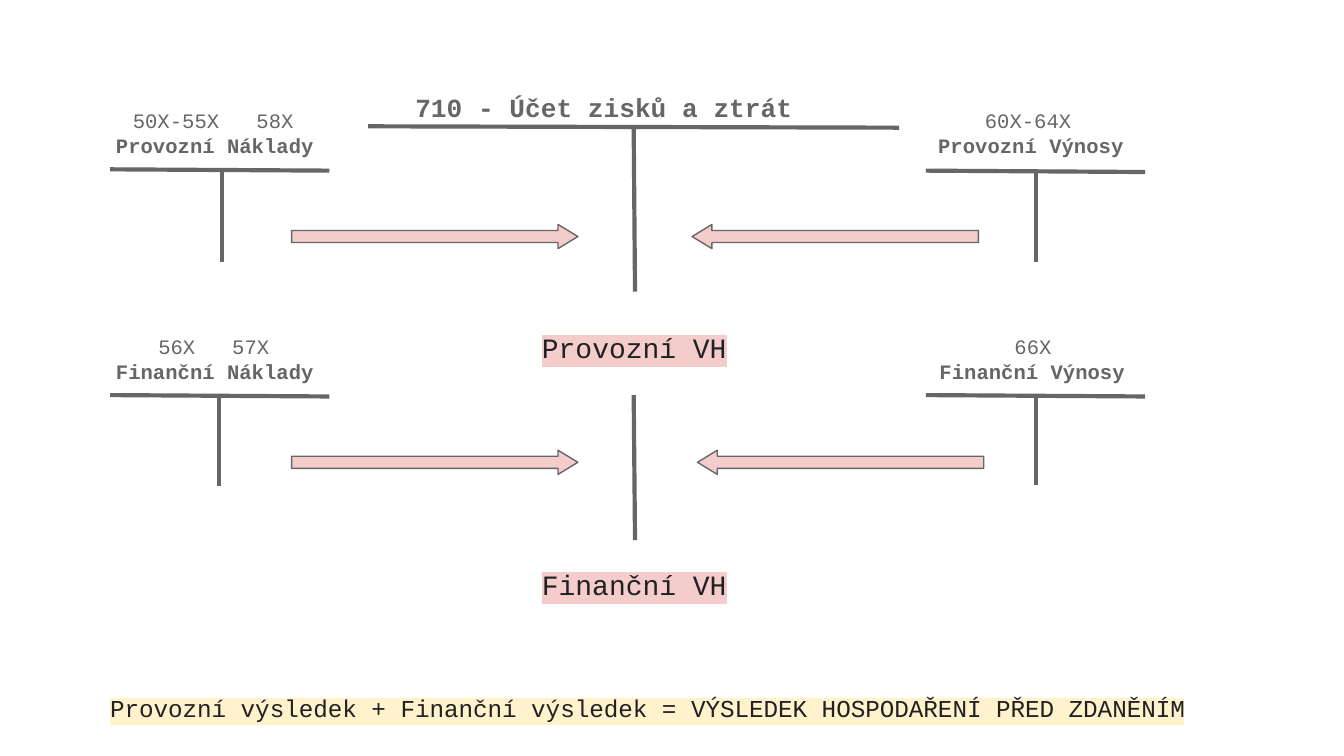
import pptx
import pptx.dml.color
import pptx.enum.shapes
import pptx.enum.text
import pptx.oxml
import pptx.oxml.ns
import pptx.util

THEME = {
    "font": "Courier New",
    "gray": "666666",
    "ink": "212121",
    "pink": "F4CCCC",
    "cream": "FFF2CC",
    "title": 14,
    "label": 11,
    "result": 15,
    "summary": 13,
    "rule": 2.25,
    "outline": 0.75,
}

presentation = pptx.Presentation()
presentation.slide_width = pptx.util.Inches(10)
presentation.slide_height = presentation.slide_width * 9 // 16
slide = presentation.slides.add_slide(presentation.slide_layouts[5])
COLUMN = ROW = presentation.slide_width / 100


def write(text, left, top, width, height, size="label", color="gray",
          bold=False, highlight=None, tab=None, shape=None):
    box = [int(left * COLUMN), int(top * ROW), int(width * COLUMN), int(height * ROW)]
    shape = shape or slide.shapes.add_textbox(*box)
    shape.left, shape.top, shape.width, shape.height = box
    frame = shape.text_frame
    frame.word_wrap = True
    frame.auto_size = pptx.enum.text.MSO_AUTO_SIZE.NONE
    frame.vertical_anchor = pptx.enum.text.MSO_ANCHOR.TOP
    frame.margin_left = frame.margin_right = int(COLUMN)
    frame.margin_top = frame.margin_bottom = int(ROW)
    paragraph = frame.paragraphs[0]
    paragraph.alignment = pptx.enum.text.PP_ALIGN.LEFT
    run = paragraph.add_run()
    run.text = text
    run.font.name = THEME["font"]
    run.font.size = pptx.util.Pt(THEME[size])
    run.font.bold = bold
    run.font.color.rgb = pptx.dml.color.RGBColor.from_string(THEME[color])
    namespace = pptx.oxml.ns.nsdecls("a")
    if highlight:
        fill = run.font._element.find(pptx.oxml.ns.qn("a:solidFill"))
        fill.addnext(pptx.oxml.parse_xml(
            f'<a:highlight {namespace}><a:srgbClr val="{THEME[highlight]}"/></a:highlight>'))
    if tab:
        paragraph._p.get_or_add_pPr().append(pptx.oxml.parse_xml(
            f'<a:tabLst {namespace}><a:tab pos="{int(tab * COLUMN)}" algn="l"/></a:tabLst>'))


def draw_rule(left, top, right, bottom):
    line = slide.shapes.add_connector(
        pptx.enum.shapes.MSO_CONNECTOR.STRAIGHT,
        int(left * COLUMN), int(top * ROW), int(right * COLUMN), int(bottom * ROW))
    line.line.color.rgb = pptx.dml.color.RGBColor.from_string(THEME["gray"])
    line.line.width = pptx.util.Pt(THEME["rule"])
    line._element.spPr.append(pptx.oxml.parse_xml(
        f'<a:effectLst {pptx.oxml.ns.nsdecls("a")}/>'))


write("710 - Účet zisků a ztrát", 29.9, 5.8, 36, 4.8, size="title", bold=True,
      shape=slide.shapes.title)
draw_rule(27.4, 9.4, 66.9, 9.5)
draw_rule(47.15, 9.6, 47.25, 21.7)
draw_rule(47.15, 29.4, 47.25, 40.2)

accounts = [
    ("Provozní Náklady", 7.64, 8.9, 17.9, 3.9, "50X-55X\t58X", 8.9, 15.7, 9.2,
     8.2, 12.6, 16.5, 12.8),
    ("Finanční Náklady", 7.64, 25.7, 18.2, 3.1, "56X\t57X", 10.8, 11.6, 5.5,
     8.2, 29.4, 16.3, 29.5),
    ("Provozní Výnosy", 68.82, 8.9, 17.9, 2.5, "60X-64X", 72.3, 15.3, None,
     68.9, 12.7, 77.1, 12.8),
    ("Finanční Výnosy", 68.92, 25.7, 22, 3.1, "66X", 74.5, 6.6, None,
     68.9, 29.4, 77.1, 29.4),
]
for (name, name_left, name_top, name_width, name_height, codes, codes_left,
     codes_width, tab, bar_left, bar_top, stem, stem_top) in accounts:
    draw_rule(bar_left, bar_top, bar_left + 16.3, bar_top + 0.1)
    draw_rule(stem, stem_top, stem, stem_top + 6.7)
    write(name, name_left, name_top, name_width, name_height, bold=True)
    write(codes, codes_left, name_top - 1.85, codes_width, 2.5, tab=tab)

arrows = [
    (21.7, 16.7, False),
    (21.7, 33.5, False),
    (51.5, 16.7, True),
    (51.9, 33.5, True),
]
for left, top, flipped in arrows:
    arrow = slide.shapes.add_shape(
        pptx.enum.shapes.MSO_SHAPE.RIGHT_ARROW,
        int(left * COLUMN), int(top * ROW), int(21.3 * COLUMN), int(1.8 * ROW))
    arrow.adjustments[0] = 0.5
    arrow.adjustments[1] = 0.82
    arrow.shadow.inherit = False
    arrow.fill.solid()
    arrow.fill.fore_color.rgb = pptx.dml.color.RGBColor.from_string(THEME["pink"])
    arrow.line.color.rgb = pptx.dml.color.RGBColor.from_string(THEME["gray"])
    arrow.line.width = pptx.util.Pt(THEME["outline"])
    if flipped:
        arrow._element.spPr.xfrm.set("flipH", "1")

for result, top, width, height in [("Provozní VH", 23.6, 18.2, 3.9),
                                   ("Finanční VH", 41.23, 23.7, 5)]:
    write(result, 39.34, top, width, height, size="result", color="ink", highlight="pink")

write("Provozní výsledek + Finanční výsledek = VÝSLEDEK HOSPODAŘENÍ PŘED ZDANĚNÍM",
      7.2, 50.6, 85.8, 3.9, size="summary", color="ink", highlight="cream")

presentation.save("out.pptx")
